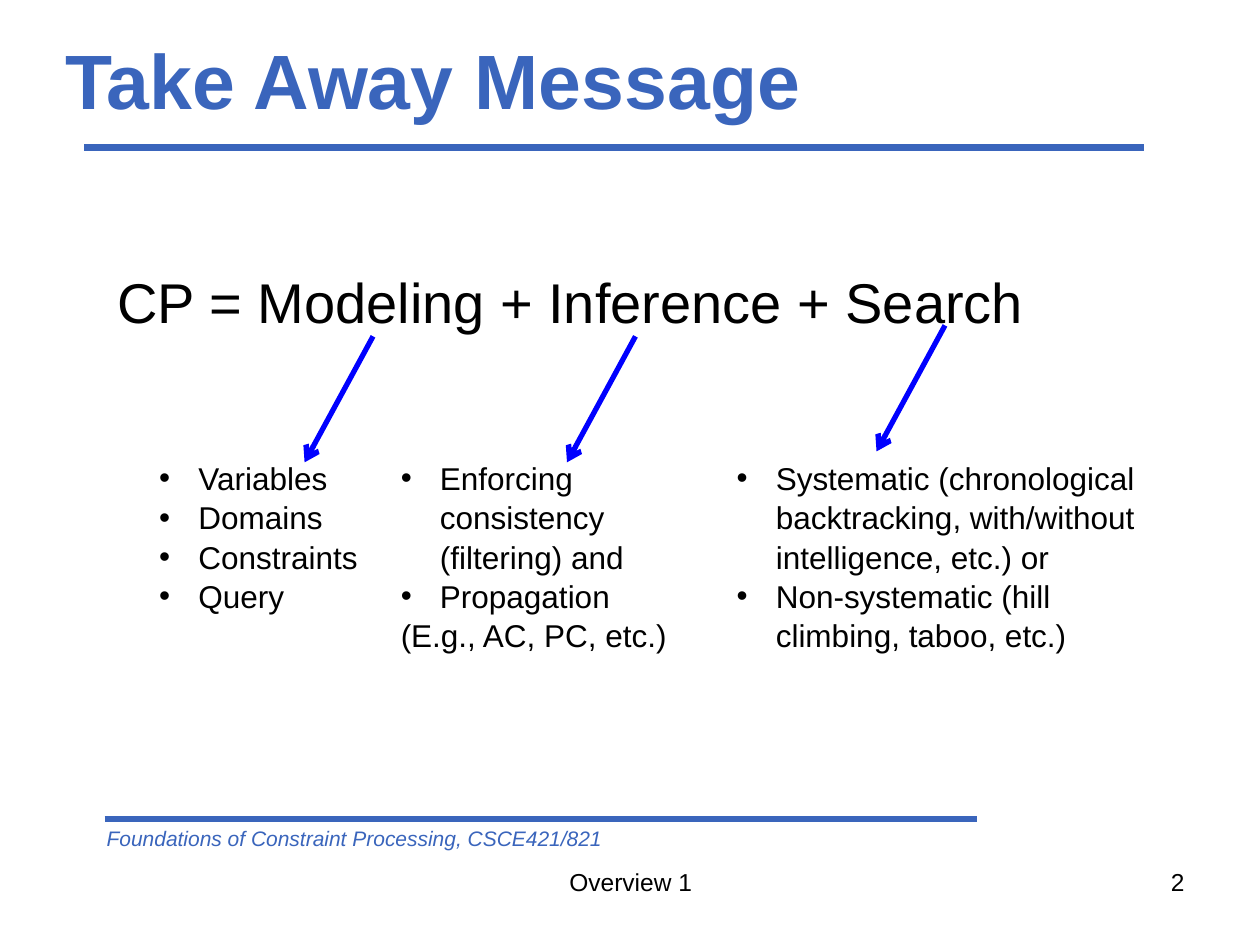
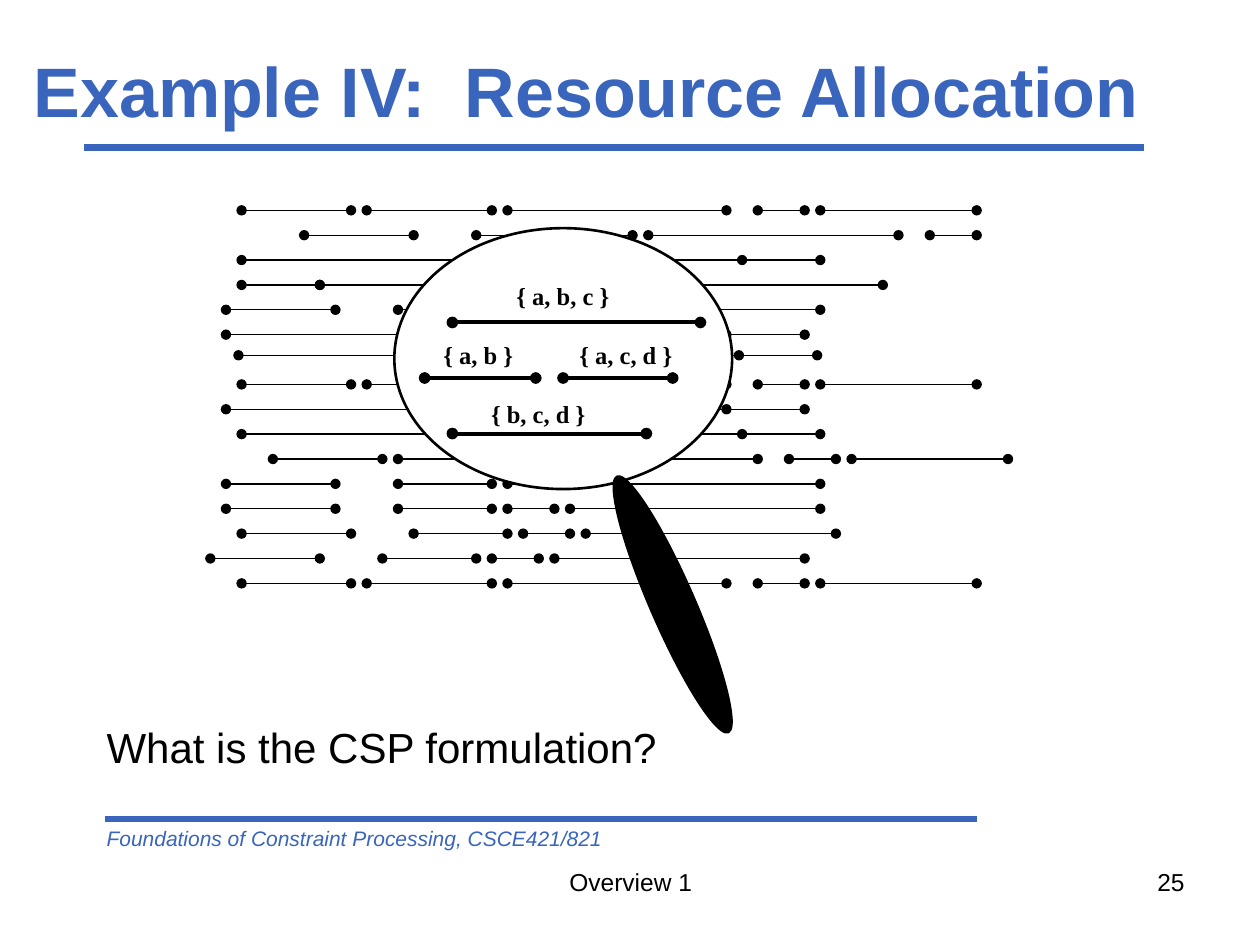
from lxml.etree import SubElement
from pptx import Presentation
from pptx.dml.color import RGBColor
from pptx.enum.shapes import MSO_CONNECTOR as Connector, MSO_SHAPE as Shape
from pptx.enum.text import MSO_ANCHOR as Anchor, PP_ALIGN as Align
from pptx.oxml.ns import qn
from pptx.util import Cm, Pt

ACCENT = "3A65BC"
BLACK = "000000"
WHITE = "FFFFFF"
ARROW_BLUE = "0000FF"
HANGING = 0.79

GRID_LEFT, GRID_TOP = 4.24, 4.24
COLUMN_WIDTH = 16.08 / 51
ROW_HEIGHT = 7.52 / 15

FIVE_TASKS = [(2, 9), (10, 18), (19, 33), (35, 38), (39, 49)]
FIVE_STAGGERED = [(6, 13), (17, 23), (24, 27), (28, 44), (46, 49)]
FOUR_TASKS = [(1, 8), (12, 18), (19, 22), (23, 39)]
LONG_OVERLAP = [(2, 34), (20, 39)]
EARLY_OVERLAP = [(1, 33), (19, 38)]
TOUCHING = [(2, 7), (7, 43)]

TASK_ROWS = [
    (0, FIVE_TASKS, 0),
    (1, FIVE_STAGGERED, 0),
    (2, LONG_OVERLAP, 0),
    (3, TOUCHING, 0),
    (4, FOUR_TASKS, 0),
    (5, EARLY_OVERLAP, 0),
    (5.83, LONG_OVERLAP, -0.2),
    (7, FIVE_TASKS, 0),
    (8, EARLY_OVERLAP, 0),
    (9, LONG_OVERLAP, 0),
    (10, FIVE_TASKS, 2),
    (11, FOUR_TASKS, 0),
    (12, FOUR_TASKS, 0),
    (13, FOUR_TASKS, 1),
    (14, FOUR_TASKS, -1),
    (15, FIVE_TASKS, 0),
]


def rgb(value):
    return RGBColor.from_string(value)


class Deck:
    def __init__(self):
        self.presentation = Presentation()
        self.presentation.slide_width = Cm(25.4)
        self.presentation.slide_height = Cm(19.05)
        self.slide = None

    def add_slide(self, title, title_box, title_size, number):
        layout = self.presentation.slide_layouts[6]
        self.slide = self.presentation.slides.add_slide(layout)
        self.line((1.7, 2.97), (23.06, 2.97), ACCENT, 4)
        self.line((2.11, 16.51), (19.69, 16.51), ACCENT, 4)
        self.text("Foundations of Constraint Processing, CSCE421/821",
                  (1.9, 16.51, 13.34, 0.76), 12, ACCENT, italic=True)
        self.text("Overview 1", (8.69, 17.35, 8.05, 1.32), 14, align=Align.CENTER)
        self.text(number, (18.21, 17.35, 5.92, 1.32), 14, align=Align.RIGHT)
        self.text(title, title_box, title_size, ACCENT, bold=True, anchor=Anchor.MIDDLE)

    def frame(self, box, anchor=Anchor.TOP):
        shape = self.slide.shapes.add_textbox(*map(Cm, box))
        shape.text_frame.word_wrap = True
        shape.text_frame.vertical_anchor = anchor
        return shape.text_frame

    def style(self, paragraph, size, color=BLACK, bold=False, italic=False, name="Arial"):
        font = paragraph.font
        font.name = name
        font.size = Pt(size)
        font.bold = bold
        font.italic = italic
        font.color.rgb = rgb(color)

    def text(self, content, box, size, color=BLACK, align=Align.LEFT,
             anchor=Anchor.TOP, **font):
        paragraph = self.frame(box, anchor).paragraphs[0]
        paragraph.text = content
        paragraph.alignment = align
        self.style(paragraph, size, color, **font)

    def bullets(self, items, box, closing=None):
        frame = self.frame(box)
        lines = items + ([closing] if closing else [])
        for index, content in enumerate(lines):
            paragraph = frame.add_paragraph() if index else frame.paragraphs[0]
            paragraph.text = content
            properties = paragraph._p.get_or_add_pPr()
            properties.set("marL", str(Cm(HANGING)))
            properties.set("indent", str(-Cm(HANGING)))
            if index < len(items):
                SubElement(properties, qn("a:buFont"), typeface="Arial")
                SubElement(properties, qn("a:buChar"), char="•")
            paragraph.line_spacing = 1.04
            self.style(paragraph, 18)

    def line(self, start, end, color=BLACK, width=0.75, head=None, tail=None):
        connector = self.slide.shapes.add_connector(
            Connector.STRAIGHT, *map(Cm, start + end))
        connector.line.color.rgb = rgb(color)
        connector.line.width = Pt(width)
        properties = connector._element.spPr
        outline = properties.find(qn("a:ln"))
        for tag, kind in (("a:headEnd", head), ("a:tailEnd", tail)):
            if kind:
                SubElement(outline, qn(tag), type=kind)
        SubElement(properties, qn("a:effectLst"))

    def interval(self, left, right, top, width=0.75):
        self.line((left, top), (right, top), width=width, head="oval", tail="oval")

    def ellipse(self, box, fill, width, rotation=0):
        shape = self.slide.shapes.add_shape(Shape.OVAL, *map(Cm, box))
        shape.shadow.inherit = False
        shape.fill.solid()
        shape.fill.fore_color.rgb = rgb(fill)
        shape.line.color.rgb = rgb(BLACK)
        shape.line.width = Pt(width)
        shape.rotation = rotation


def add_take_away(deck):
    deck.add_slide("Take Away Message", (1.07, 0, 22.86, 3.18), 44, "2")
    deck.text("CP = Modeling + Inference + Search", (2.11, 5.26, 23, 1.7), 32)
    deck.bullets(["Systematic (chronological backtracking, with/without intelligence, etc.) or",
                  "Non-systematic (hill climbing, taboo, etc.)"],
                 (14.6, 9.1, 9.1, 4.11))
    deck.bullets(["Enforcing consistency (filtering) and", "Propagation"],
                 (7.83, 9.1, 6.55, 4.11), closing="(E.g., AC, PC, etc.)")
    deck.bullets(["Variables", "Domains", "Constraints", "Query"],
                 (2.96, 9.1, 4.65, 3.33))
    for left, top in ((7.52, 6.78), (12.81, 6.78), (19.05, 6.56)):
        deck.line((left, top), (left - 1.38, top + 2.54), ARROW_BLUE, 3, tail="arrow")


def add_resource_allocation(deck):
    deck.add_slide("Example IV:  Resource Allocation", (0.43, 0.64, 24.97, 2.34), 40, "25")
    deck.text("What is the CSP formulation?", (1.9, 14.43, 21.59, 1.3), 24)
    for row, tasks, shift in TASK_ROWS:
        for start, end in tasks:
            left, right = (GRID_LEFT + (column + shift) * COLUMN_WIDTH
                           for column in (start, end))
            deck.interval(left, right, GRID_TOP + row * ROW_HEIGHT)

    deck.ellipse((7.95, 4.6, 6.81, 5.26), WHITE, 1.5)
    magnified = [
        ("{ a, b, c }", 10.16, 9.12, 14.12, 0),
        ("{ a, b }", 8.69, 8.56, 10.8, 1),
        ("{ a, c, d }", 11.43, 11.35, 13.56, 1),
        ("{ b, c, d }", 9.65, 9.12, 13.03, 2),
    ]
    for label, label_left, left, right, level in magnified:
        deck.interval(left, right, 6.5 + level * 1.12, 2.25)
        deck.text(label, (label_left, 5.54 + level * 1.19, 3, 0.85), 14,
                  bold=True, name="Times New Roman")
    deck.ellipse((10.74, 11.73, 5.64, 0.91), BLACK, 0.75, rotation=66.5)


def main():
    deck = Deck()
    add_take_away(deck)
    add_resource_allocation(deck)
    deck.presentation.save("out.pptx")


if __name__ == "__main__":
    main()
